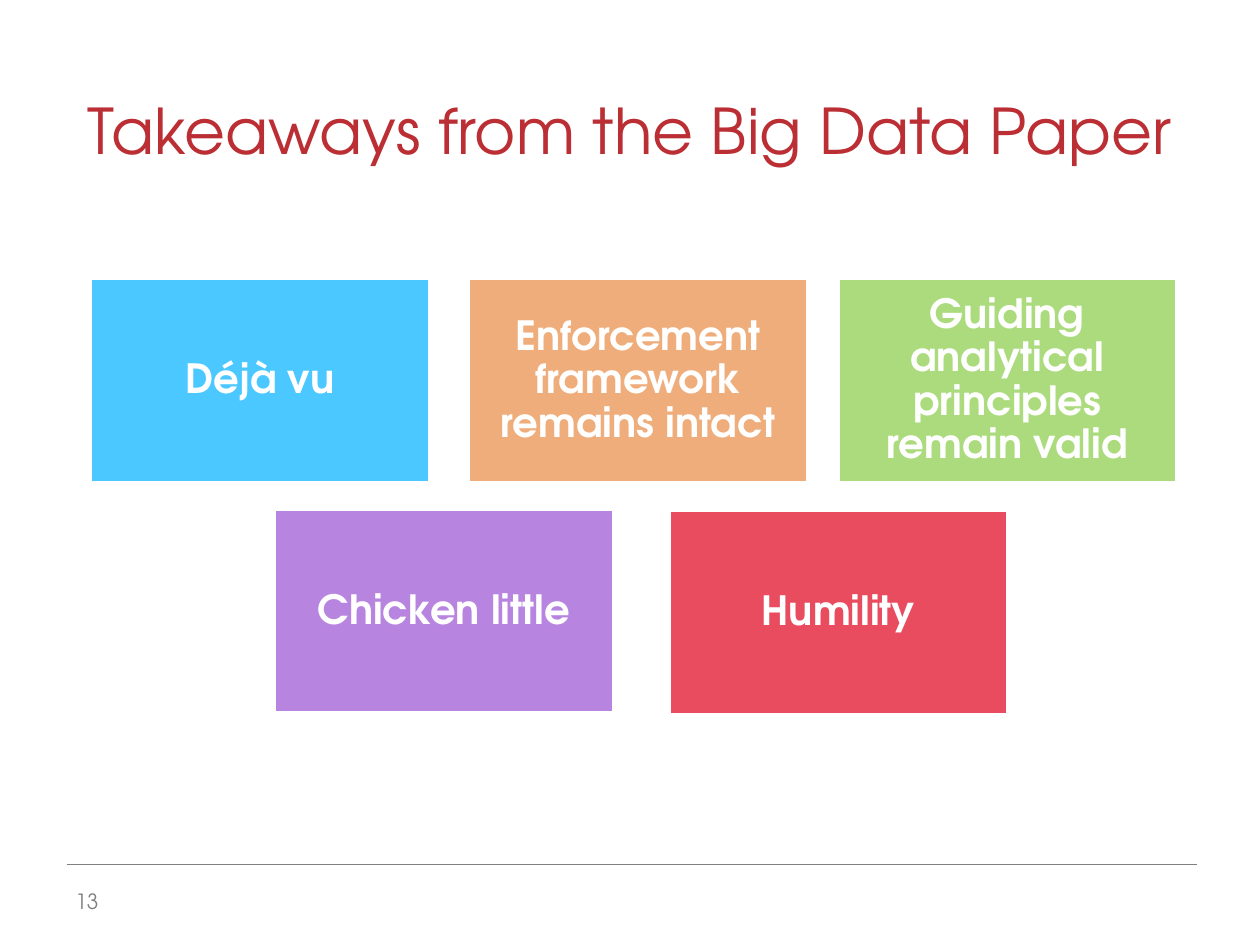
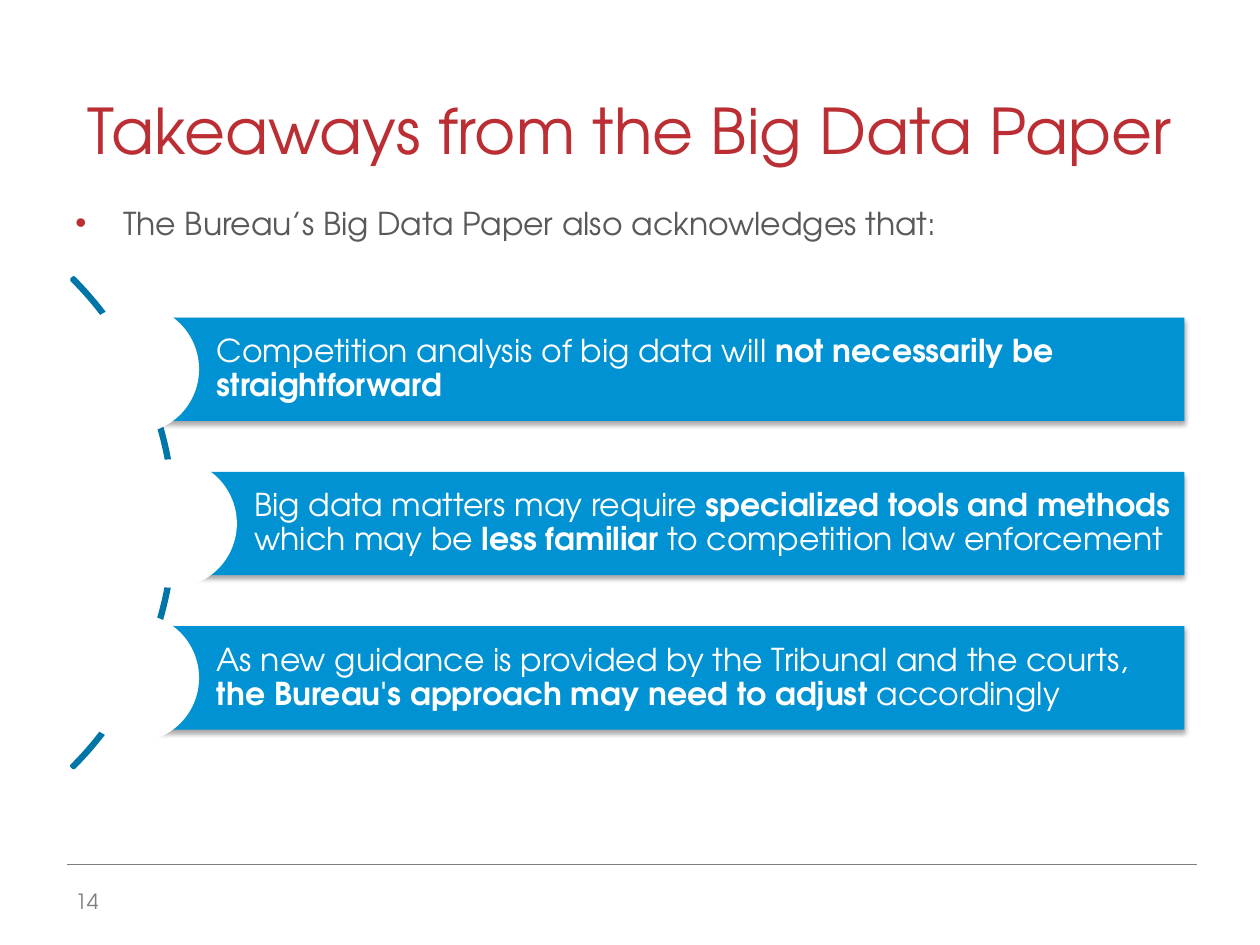
from lxml.etree import SubElement
from pptx import Presentation
from pptx.dml.color import RGBColor
from pptx.enum.shapes import MSO_CONNECTOR, MSO_SHAPE
from pptx.enum.text import MSO_ANCHOR, MSO_AUTO_SIZE, PP_ALIGN
from pptx.oxml.ns import qn
from pptx.util import Inches, Pt

FONT = "TeX Gyre Adventor"
RED, BLUE, DARK_BLUE = "BA2E34", "0092D2", "0075A8"
WHITE, GREY, DARK_GREY = "FFFFFF", "7F7F7F", "595959"

TITLE = "Takeaways from the Big Data Paper"
FIRST_PAGE = 13

TILE_SIZE = (2.69, 1.62)
TILES = [  # text, fill, left, top
    ("Déjà vu", "4BC8FF", 0.72, 2.21),
    ("Enforcement framework remains intact", "EFAD7B", 3.72, 2.21),
    ("Guiding analytical principles remain valid", "ABDB7C", 6.65, 2.21),
    ("Chicken little", "B785E0", 2.18, 4.04),
    ("Humility", "E94B5F", 5.31, 4.05),
]

INTRO = "The Bureau’s Big Data Paper also acknowledges that:"
FINDINGS = [  # bar left, runs of (text, bold)
    (1.07, [("Competition analysis of big data will ", False),
            ("not necessarily be straightforward", True)]),
    (1.37, [("Big data matters may require ", False),
            ("specialized tools and methods ", True),
            ("which may be ", False),
            ("less familiar ", True),
            ("to competition law enforcement", False)]),
    (1.07, [("As new guidance is provided by the Tribunal and the courts, ", False),
            ("the Bureau's approach may need to adjust ", True),
            ("accordingly", False)]),
]
BAR_TOP, BAR_PITCH, BAR_HEIGHT, BAR_RIGHT = 2.52, 1.225, 0.82, 9.4
CIRCLE_SIZE = 1.02


def color(hex_string):
    return RGBColor.from_string(hex_string)


def box(*lengths):
    return [Inches(length) for length in lengths]


def set_text(shape, runs, size, font_color, align=PP_ALIGN.LEFT, spacing=None,
             anchor=MSO_ANCHOR.MIDDLE, margins=(0.1, 0.05, 0.1, 0.05)):
    """Fill the shape with one paragraph of (text, bold) runs and return it."""
    frame = shape.text_frame
    left, top, right, bottom = box(*margins)
    frame_format = {
        "word_wrap": True, "auto_size": MSO_AUTO_SIZE.NONE, "vertical_anchor": anchor,
        "margin_left": left, "margin_top": top,
        "margin_right": right, "margin_bottom": bottom,
    }
    for name, value in frame_format.items():
        setattr(frame, name, value)
    paragraph = frame.paragraphs[0]
    paragraph.alignment = align
    if spacing:
        paragraph.line_spacing = spacing
    for text, bold in runs:
        run = paragraph.add_run()
        run.text = text
        for name, value in {"name": FONT, "size": Pt(size), "bold": bold}.items():
            setattr(run.font, name, value)
        run.font.color.rgb = color(font_color)
    return paragraph


def add_shape(slide, kind, position, fill=None, line=None):
    shape = slide.shapes.add_shape(kind, *box(*position))
    shape.shadow.inherit = False
    if fill:
        shape.fill.solid()
        shape.fill.fore_color.rgb = color(fill)
    else:
        shape.fill.background()
    if line:
        shape.line.color.rgb = color(line)
        shape.line.width = Pt(2)
    else:
        shape.line.fill.background()
    return shape


def add_drop_shadow(shape):
    effects = shape._element.spPr.find(qn("a:effectLst"))
    shadow = SubElement(effects, qn("a:outerShdw"), blurRad=str(Pt(3.1)),
                        dist=str(Pt(1.8)), dir="5400000", rotWithShape="0")
    black = SubElement(shadow, qn("a:srgbClr"), val="000000")
    SubElement(black, qn("a:alpha"), val="35000")


def add_bullet(paragraph, bullet_color):
    properties = paragraph._p.get_or_add_pPr()
    properties.set("marL", str(Inches(0.38)))
    properties.set("indent", str(-Inches(0.38)))
    fill = SubElement(properties, qn("a:buClr"))
    SubElement(fill, qn("a:srgbClr"), val=bullet_color)
    SubElement(properties, qn("a:buFont"), typeface="Arial")
    SubElement(properties, qn("a:buChar"), char="•")


def add_base_slide(presentation, page):
    """Add a slide with the shared footer rule, title and page number."""
    slide = presentation.slides.add_slide(presentation.slide_layouts[5])
    rule = slide.shapes.add_connector(MSO_CONNECTOR.STRAIGHT, *box(0.53, 6.86, 9.5, 6.86))
    rule.line.color.rgb = color(GREY)
    rule.line.width = Pt(0.25)
    SubElement(rule._element.spPr, qn("a:effectLst"))

    title = slide.shapes.title
    title.left, title.top, title.width, title.height = box(0.5, 0.3, 9, 1.08)
    set_text(title, [(TITLE, False)], 36, RED, PP_ALIGN.CENTER, anchor=MSO_ANCHOR.BOTTOM)

    number = slide.shapes.add_textbox(*box(0.5, 6.95, 1.07, 0.4))
    set_text(number, [(str(page), False)], 12, GREY)
    return slide


def add_tiles(slide):
    for text, fill, left, top in TILES:
        tile = add_shape(slide, MSO_SHAPE.RECTANGLE, (left, top, *TILE_SIZE), fill, WHITE)
        set_text(tile, [(text, True)], 23, WHITE, PP_ALIGN.CENTER, 0.9, margins=(0.1,) * 4)


def add_findings(slide):
    intro = slide.shapes.add_textbox(*box(0.5, 1.57, 9, 0.5))
    paragraph = set_text(intro, [(INTRO, False)], 18, DARK_GREY, anchor=MSO_ANCHOR.TOP)
    add_bullet(paragraph, RED)

    arc = add_shape(slide, MSO_SHAPE.BLOCK_ARC, (-4.11, 1.4, 5.5, 5.5), line=DARK_BLUE)
    for index, value in enumerate((189, 27, 0.004)):
        arc.adjustments[index] = value

    for index, (left, runs) in enumerate(FINDINGS):
        top = BAR_TOP + index * BAR_PITCH
        bar = add_shape(slide, MSO_SHAPE.RECTANGLE,
                        (left, top, BAR_RIGHT - left, BAR_HEIGHT), BLUE)
        add_drop_shadow(bar)
        set_text(bar, runs, 18, WHITE, spacing=0.9, margins=(0.65, 0.05, 0.05, 0.05))
        circle_top = top + (BAR_HEIGHT - CIRCLE_SIZE) / 2
        add_shape(slide, MSO_SHAPE.OVAL,
                  (left - CIRCLE_SIZE / 2, circle_top, CIRCLE_SIZE, CIRCLE_SIZE), WHITE)


def main():
    presentation = Presentation()
    presentation.slide_width, presentation.slide_height = box(10, 7.5)
    for page, add_content in enumerate((add_tiles, add_findings), FIRST_PAGE):
        add_content(add_base_slide(presentation, page))
    presentation.save("out.pptx")


if __name__ == "__main__":
    main()
